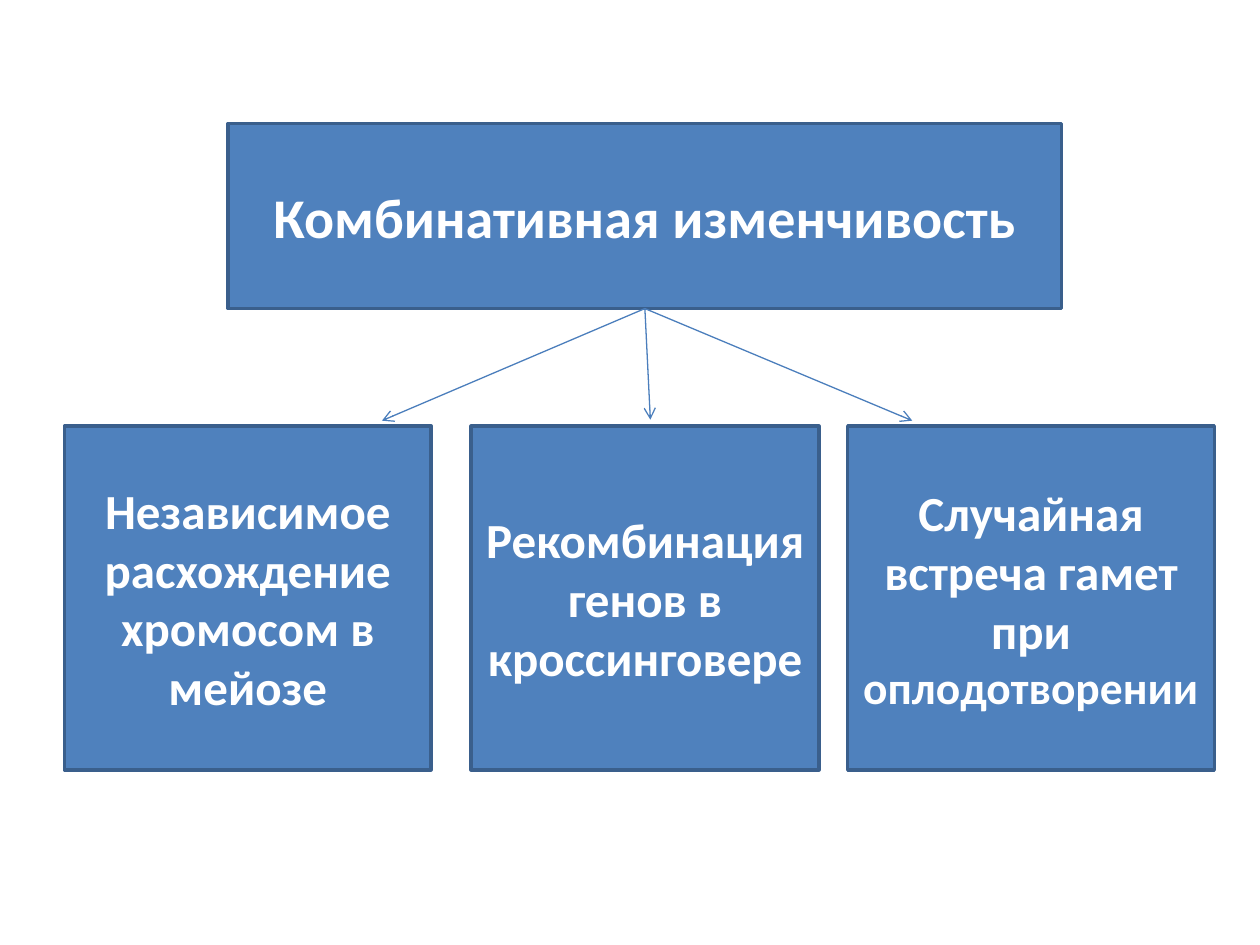
from lxml.etree import SubElement
from pptx import Presentation
from pptx.dml.color import RGBColor
from pptx.enum.shapes import MSO_CONNECTOR, MSO_SHAPE
from pptx.enum.text import MSO_ANCHOR, PP_ALIGN
from pptx.oxml.ns import qn
from pptx.util import Cm, Pt

COLORS = {"box": "4F81BD", "border": "3A5F8C", "arrow": "4B7EBC", "text": "FFFFFF"}
FONT = "Calibri"

HEADING = [("Комбинативная изменчивость", 32)]
CAUSE_TOP, CAUSE_HEIGHT = 8.59, 6.93
# left, width, text runs
CAUSES = [
    (1.3, 7.39, [("Независимое расхождение хромосом в мейозе", 28)]),
    (9.5, 7.01, [("Рекомбинация генов в кроссинговере", 28)]),
    (17.09, 7.39, [("Случайная встреча гамет при ", 28), ("оплодотворении", 26)]),
]
ARROW_START = (13.0, 6.22)
ARROW_ENDS = [(7.7, 8.48), (13.11, 8.46), (18.39, 8.48)]


def color(name):
    return RGBColor.from_string(COLORS[name])


def add_box(slide, left, top, width, height, runs):
    sp = slide.shapes.add_shape(
        MSO_SHAPE.RECTANGLE, Cm(left), Cm(top), Cm(width), Cm(height))
    sp.shadow.inherit = False
    sp.fill.solid()
    sp.fill.fore_color.rgb = color("box")
    sp.line.color.rgb = color("border")
    sp.line.width = Pt(2)
    tf = sp.text_frame
    tf.word_wrap = True
    tf.vertical_anchor = MSO_ANCHOR.MIDDLE
    p = tf.paragraphs[0]
    p.alignment = PP_ALIGN.CENTER
    for text, size in runs:
        r = p.add_run()
        r.text = text
        r.font.name = FONT
        r.font.size = Pt(size)
        r.font.bold = True
        r.font.color.rgb = color("text")


def add_arrow(slide, start, end):
    line = slide.shapes.add_connector(
        MSO_CONNECTOR.STRAIGHT, *(Cm(v) for v in start + end))
    line.line.color.rgb = color("arrow")
    line.line.width = Pt(0.75)
    SubElement(line.line._get_or_add_ln(), qn("a:tailEnd"), type="arrow")
    SubElement(line._element.spPr, qn("a:effectLst"))


def main():
    prs = Presentation()
    prs.slide_width, prs.slide_height = Cm(25.4), Cm(19.05)
    s = prs.slides.add_slide(prs.slide_layouts[6])
    add_box(s, 4.6, 2.49, 16.8, 3.73, HEADING)
    for left, width, runs in CAUSES:
        add_box(s, left, CAUSE_TOP, width, CAUSE_HEIGHT, runs)
    for end in ARROW_ENDS:
        add_arrow(s, ARROW_START, end)
    prs.save("out.pptx")


if __name__ == "__main__":
    main()
